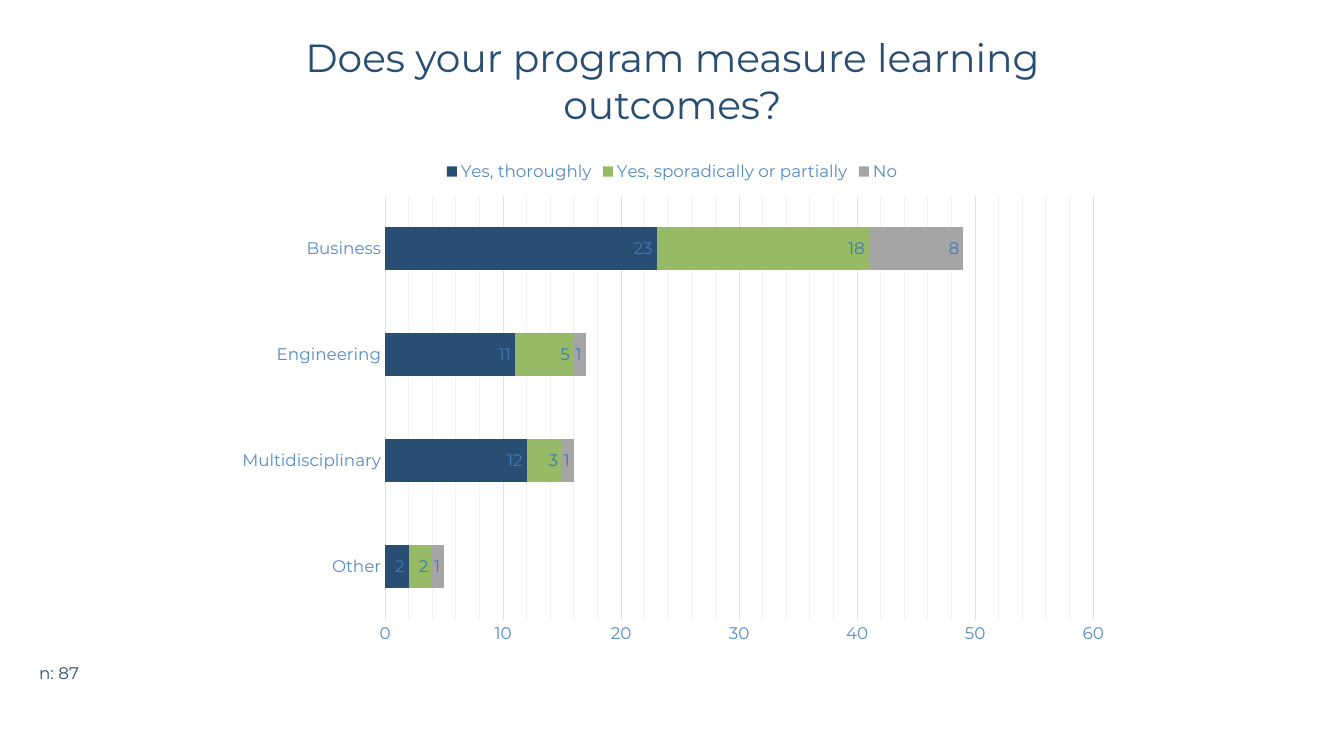
from copy import deepcopy
from dataclasses import dataclass

from lxml.etree import SubElement
from pptx import Presentation
from pptx.chart.chart import Chart
from pptx.chart.data import CategoryChartData
from pptx.dml.color import RGBColor
from pptx.enum.chart import XL_CHART_TYPE, XL_LABEL_POSITION, XL_LEGEND_POSITION, XL_TICK_MARK
from pptx.enum.text import PP_ALIGN
from pptx.oxml.ns import qn
from pptx.slide import Slide
from pptx.util import Inches, Pt


@dataclass(frozen=True)
class Theme:
    font: str = "Montserrat"
    navy: str = "294E73"
    green: str = "96BA65"
    gray: str = "A5A5A5"
    axis_text: str = "558CC3"
    label_text: str = "407AB4"
    grid: str = "D8E4F1"
    minor_grid: str = "F2F2F2"
    title_size: int = 28
    body_size: int = 12


@dataclass(frozen=True)
class Caption:
    text: str
    left: float
    top: float
    width: float
    height: float
    size: int
    align: PP_ALIGN


@dataclass(frozen=True)
class Answer:
    name: str
    counts: tuple[int, ...]
    color: str


THEME = Theme()
CAPTIONS = (
    Caption("Does your program measure learning outcomes?",
            2.35, 0.28, 8.64, 1.04, THEME.title_size, PP_ALIGN.CENTER),
    Caption("n: 87", 0.29, 6.53, 0.96, 0.3, THEME.body_size, PP_ALIGN.LEFT),
)
PROGRAMS = ("Other", "Multidisciplinary", "Engineering", "Business")
ANSWERS = (
    Answer("Yes, thoroughly", (2, 12, 11, 23), THEME.navy),
    Answer("Yes, sporadically or partially", (2, 3, 5, 18), THEME.green),
    Answer("No", (1, 1, 1, 8), THEME.gray),
)
# Plot area as fractions of the chart frame
PLOT_AREA = {"x": 0.18, "y": 0.09, "w": 0.79, "h": 0.84}


def style_font(font, size: int, color: str) -> None:
    font.name = THEME.font
    font.size = Pt(size)
    font.color.rgb = RGBColor.from_string(color)


def style_line(line, color: str) -> None:
    line.color.rgb = RGBColor.from_string(color)
    line.width = Pt(0.75)


def add_caption(page: Slide, caption: Caption) -> None:
    box = page.shapes.add_textbox(Inches(caption.left), Inches(caption.top),
                                  Inches(caption.width), Inches(caption.height))
    frame = box.text_frame
    frame.word_wrap = True
    frame.text = caption.text
    para = frame.paragraphs[0]
    para.alignment = caption.align
    style_font(para.runs[0].font, caption.size, THEME.navy)


def place_plot_area(chart: Chart) -> None:
    plot_area = chart.plots[0]._element.getparent()
    layout = plot_area.find(qn("c:layout"))
    if layout is None:
        layout = SubElement(plot_area, qn("c:layout"))
        plot_area.insert(0, layout)
    manual = SubElement(layout, qn("c:manualLayout"))
    settings = {"layoutTarget": "inner", "xMode": "edge", "yMode": "edge", **PLOT_AREA}
    for tag, value in settings.items():
        SubElement(manual, qn(f"c:{tag}")).set("val", str(value))


def style_gridlines(axis) -> None:
    axis.has_major_gridlines = axis.has_minor_gridlines = True
    style_line(axis.major_gridlines.format.line, THEME.grid)
    # Minor gridlines share the major line style in a paler color
    major = axis._element.find(qn("c:majorGridlines"))
    minor = axis._element.find(qn("c:minorGridlines"))
    minor.append(deepcopy(major.find(qn("c:spPr"))))
    for color in minor.iter(qn("a:srgbClr")):
        color.set("val", THEME.minor_grid)


def style_axes(chart: Chart) -> None:
    for axis in (chart.category_axis, chart.value_axis):
        axis.major_tick_mark = XL_TICK_MARK.NONE
        axis.minor_tick_mark = XL_TICK_MARK.NONE
        style_font(axis.tick_labels.font, THEME.body_size, THEME.axis_text)
    style_line(chart.category_axis.format.line, THEME.grid)

    counts = chart.value_axis
    counts.minimum_scale, counts.maximum_scale = 0, 60
    counts.major_unit, counts.minor_unit = 10, 2
    counts.format.line.fill.background()
    style_gridlines(counts)


def add_answer_chart(page: Slide) -> None:
    data = CategoryChartData()
    data.categories = PROGRAMS
    for answer in ANSWERS:
        data.add_series(answer.name, answer.counts)
    chart = page.shapes.add_chart(XL_CHART_TYPE.BAR_STACKED, Inches(2.22), Inches(1.49),
                                  Inches(8.89), Inches(5.01), data).chart
    chart.has_title = False
    style_font(chart.font, 10, THEME.navy)

    # Legend above the bars
    chart.has_legend = True
    chart.legend.position = XL_LEGEND_POSITION.TOP
    chart.legend.include_in_layout = False
    style_font(chart.legend.font, THEME.body_size, THEME.axis_text)

    # Bars and their counts
    plot = chart.plots[0]
    plot.gap_width = 150
    plot.overlap = 100
    plot.vary_by_categories = False
    for series, answer in zip(plot.series, ANSWERS):
        series.format.fill.solid()
        series.format.fill.fore_color.rgb = RGBColor.from_string(answer.color)
        labels = series.data_labels
        labels.show_value = True
        labels.position = XL_LABEL_POSITION.INSIDE_END
        style_font(labels.font, THEME.body_size, THEME.label_text)

    style_axes(chart)
    place_plot_area(chart)


def main() -> None:
    deck = Presentation()
    deck.slide_width = Inches(13.33)
    deck.slide_height = Inches(7.5)
    page = deck.slides.add_slide(deck.slide_layouts[6])

    add_answer_chart(page)
    for caption in CAPTIONS:
        add_caption(page, caption)
    deck.save("out.pptx")


if __name__ == "__main__":
    main()
